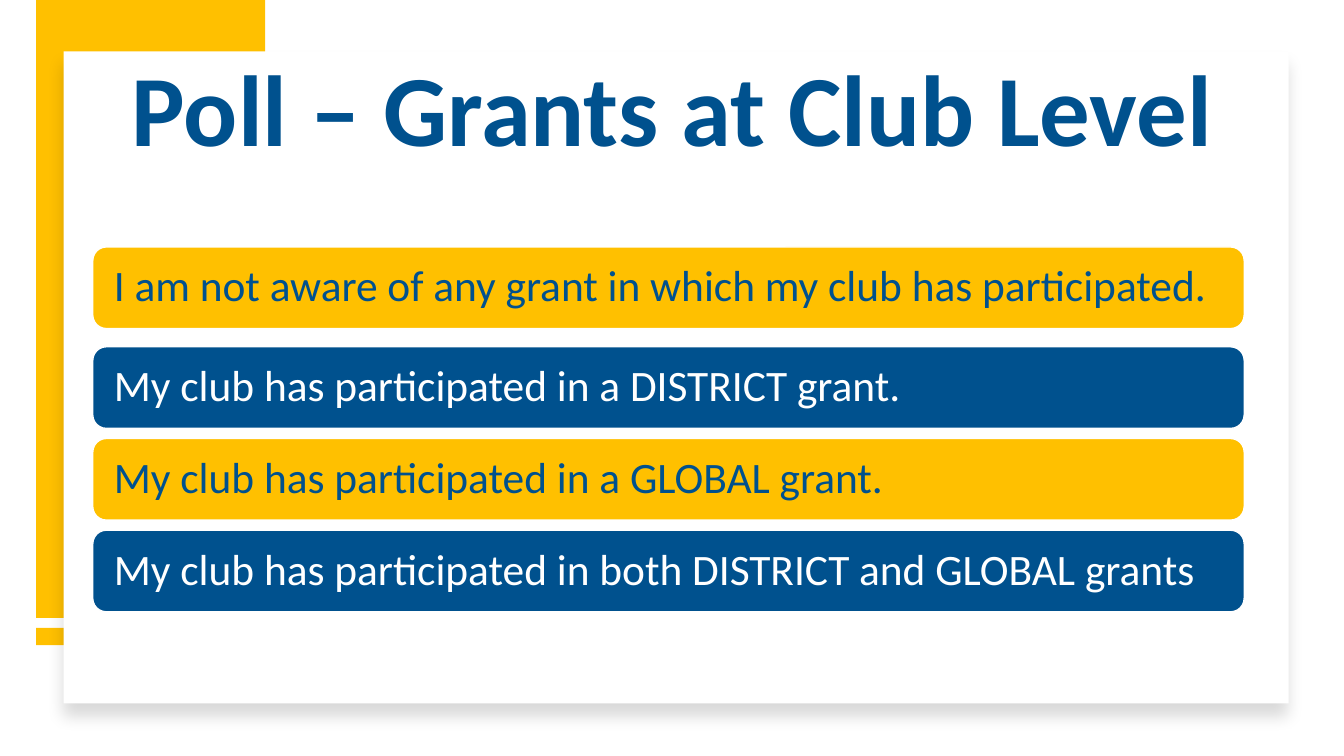
import pptx
import pptx.dml.color
import pptx.enum.shapes
import pptx.enum.text
import pptx.oxml
import pptx.util

Inches = pptx.util.Inches
Pt = pptx.util.Pt
RGBColor = pptx.dml.color.RGBColor
Shape = pptx.enum.shapes.MSO_SHAPE
Align = pptx.enum.text.PP_ALIGN
Anchor = pptx.enum.text.MSO_ANCHOR

GOLD = RGBColor(0xFF, 0xC0, 0x00)
BLUE = RGBColor(0x00, 0x51, 0x8E)
WHITE = RGBColor(0xFF, 0xFF, 0xFF)
FONT = "Calibri"

FIRST_TOP = 2.45
SECOND_TOP = 3.44
ANSWER_STEP = 0.91
ANSWERS = [
    "I am not aware of any grant in which my club has participated.",
    "My club has participated in a DISTRICT grant.",
    "My club has participated in a GLOBAL grant.",
    "My club has participated in both DISTRICT and GLOBAL grants",
]

CARD_SHADOW = (
    '<a:effectLst xmlns:a="http://schemas.openxmlformats.org/drawingml/2006/main">'
    '<a:outerShdw blurRad="139700" dist="127000" dir="5400000" algn="t" rotWithShape="0">'
    '<a:srgbClr val="000000"><a:alpha val="15000"/></a:srgbClr>'
    "</a:outerShdw></a:effectLst>"
)


def place(shape, left, top, width, height):
    shape.left, shape.top = Inches(left), Inches(top)
    shape.width, shape.height = Inches(width), Inches(height)


def add_block(slide, kind, box, fill):
    shape = slide.shapes.add_shape(kind, *(Inches(length) for length in box))
    shape.shadow.inherit = False
    shape.fill.solid()
    shape.fill.fore_color.rgb = fill
    shape.line.fill.background()
    return shape


def write_text(shape, text, size, color, alignment, bold=False):
    frame = shape.text_frame
    frame.word_wrap = True
    frame.auto_size = pptx.enum.text.MSO_AUTO_SIZE.NONE
    frame.vertical_anchor = Anchor.MIDDLE
    paragraph = frame.paragraphs[0]
    paragraph.alignment = alignment
    paragraph.line_spacing = 0.9
    run = paragraph.add_run()
    run.text = text
    run.font.name = FONT
    run.font.size = Pt(size)
    run.font.bold = bold
    run.font.color.rgb = color


def add_card(slide):
    card = add_block(slide, Shape.RECTANGLE, (0.63, 0.51, 12.15, 6.47), WHITE)
    properties = card._element.spPr
    properties.remove(properties.find(pptx.oxml.ns.qn("a:effectLst")))
    properties.append(pptx.oxml.parse_xml(CARD_SHADOW))


def add_title(slide, text):
    title = slide.shapes.title
    place(title, 0.92, 0.4, 11.5, 1.45)
    write_text(title, text, 72, BLUE, Align.CENTER, bold=True)
    # Bring the title in front of the card
    slide.shapes._spTree.append(title._element)


def add_answer(slide, text, top, fill, color):
    bar = add_block(slide, Shape.ROUNDED_RECTANGLE, (0.92, top, 11.42, 0.81), fill)
    bar.line.color.rgb = WHITE
    bar.line.width = Pt(1)
    bar.text_frame.margin_left = bar.text_frame.margin_right = Inches(0.17)
    write_text(bar, text, 31, color, Align.LEFT)


def main():
    presentation = pptx.Presentation()
    presentation.slide_width = Inches(13.33)
    presentation.slide_height = Inches(7.5)
    slide = presentation.slides.add_slide(presentation.slide_layouts[5])

    # Gold frame behind the white card
    add_block(slide, Shape.RECTANGLE, (0.36, 6.23, 2.27, 0.17), GOLD)
    add_block(slide, Shape.RECTANGLE, (0.36, 0, 2.27, 6.13), GOLD)
    add_card(slide)

    add_title(slide, "Poll – Grants at Club Level")

    # Answers in alternating colours
    for index, answer in enumerate(ANSWERS):
        top = SECOND_TOP + (index - 1) * ANSWER_STEP if index else FIRST_TOP
        fill, color = (BLUE, WHITE) if index % 2 else (GOLD, BLUE)
        add_answer(slide, answer, top, fill, color)

    presentation.save("out.pptx")


if __name__ == "__main__":
    main()
